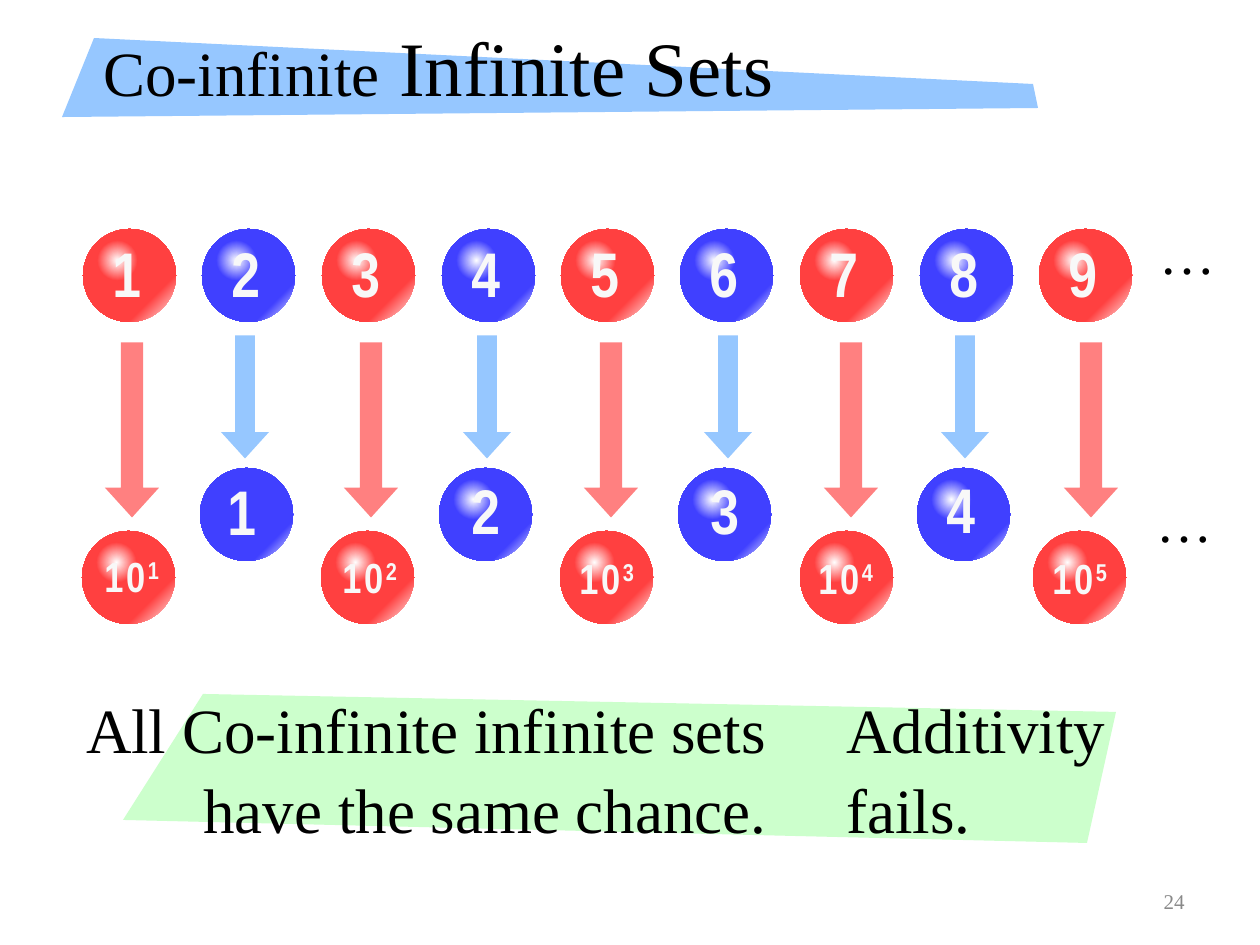
from dataclasses import dataclass

from lxml import etree
from pptx import Presentation
from pptx import util as u
from pptx.dml.color import RGBColor
from pptx.enum import shapes, text
from pptx.oxml import parse_xml

PX = 914400 / 126  # EMU in one px
NAMESPACE = "http://schemas.openxmlformats.org/drawingml/2006/main"


@dataclass(frozen=True)
class Theme:
    serif: str = "Times New Roman"
    narrow: str = "Arial Narrow"
    black: str = "000000"
    white: str = "FFFFFF"
    label: str = "F8F8F8"
    grey: str = "898989"
    red: str = "FF4040"
    blue: str = "4040FF"
    light_red: str = "FF8080"
    light_blue: str = "96C7FF"
    light_green: str = "CCFFCC"
    title_size: int = 44
    body_size: int = 36
    ellipsis_size: int = 32
    power_size: int = 24
    number_size: int = 12


THEME = Theme()
BALL, GLINT = 93, 45


def px(*lengths):
    return [u.Emu(round(length * PX)) for length in lengths]


def add_text(slide, box, runs, font=THEME.serif, size=THEME.body_size,
             color=THEME.black, bold=False, spacing=0, line=1.06, wrap=True,
             align=text.PP_ALIGN.LEFT, anchor=text.MSO_ANCHOR.TOP):
    """Each run is (words, format), where format may hold size and baseline."""
    frame = slide.shapes.add_textbox(*px(*box)).text_frame
    frame.word_wrap = wrap
    frame.vertical_anchor = anchor
    paragraph = frame.paragraphs[0]
    paragraph.alignment = align
    paragraph.line_spacing = line
    for words, run_format in runs:
        run = paragraph.add_run()
        run.text = words
        run.font.name = font
        run.font.size = u.Pt(run_format.get("size", size))
        run.font.bold = bold
        run.font.color.rgb = RGBColor.from_string(color)
        properties = run.font._element
        if spacing:
            properties.set("spc", str(round(spacing * 100)))
        if "baseline" in run_format:
            properties.set("baseline", str(run_format["baseline"] * 1000))


def paint(shape, color):
    shape.shadow.inherit = False
    shape.fill.solid()
    shape.fill.fore_color.rgb = RGBColor.from_string(color)
    shape.line.fill.background()


def add_band(slide, points, color):
    builder = slide.shapes.build_freeform(*points[0], scale=PX)
    builder.add_line_segments(points[1:], close=True)
    paint(builder.convert_to_shape(), color)


def add_arrow(slide, center_x, center_y, length, width, color):
    """A block arrow that points down."""
    box = px(center_x - length / 2, center_y - width / 2, length, width)
    arrow = slide.shapes.add_shape(shapes.MSO_SHAPE.RIGHT_ARROW, *box)
    arrow.rotation = 90
    arrow.adjustments[0], arrow.adjustments[1] = 0.41, 0.55
    paint(arrow, color)


def add_radial_circle(slide, left, top, size, stops, focus):
    """Focus gives the left, top, right and bottom insets in percent."""
    box = px(left, top, size, size)
    circle = slide.shapes.add_shape(shapes.MSO_SHAPE.OVAL, *box)
    paint(circle, THEME.white)
    stop_xml = "".join(
        f'<a:gs pos="{position * 1000}"><a:srgbClr val="{color}"/></a:gs>'
        for position, color in stops)
    insets = " ".join(f'{side}="{inset * 1000}"' for side, inset in zip("ltrb", focus))
    gradient = parse_xml(
        f'<a:gradFill xmlns:a="{NAMESPACE}" rotWithShape="1"><a:gsLst>{stop_xml}'
        f'</a:gsLst><a:path path="circle"><a:fillToRect {insets}/></a:path></a:gradFill>')
    solid = circle._element.spPr.find(etree.QName(NAMESPACE, "solidFill").text)
    solid.getparent().replace(solid, gradient)


def add_ball(slide, left, top, color, glint=True):
    edge = 74 if color == THEME.red else 78
    add_radial_circle(slide, left, top, BALL,
                      [(0, color), (edge, color), (100, THEME.white)],
                      (0, 0, 100, 100))
    if glint:
        add_radial_circle(slide, left + 12, top + 9, GLINT,
                          [(0, THEME.white), (64, color), (100, color)],
                          (50, 50, 50, 50))


def add_label(slide, box, runs, size=THEME.body_size):
    add_text(slide, box, runs, font=THEME.narrow, size=size,
             color=THEME.label, bold=True, spacing=1.5)


def add_number_row(slide):
    for index in range(9):
        left = round(83 + 119.5 * index)
        add_ball(slide, left, 229, THEME.blue if index % 2 else THEME.red)
        add_label(slide, (left + 17, 224, 69, 89), [(str(index + 1), {})])


def add_even_row(slide):
    # Ball left, label left, label top, arrow centre
    columns = [(200, 215, 462, 245), (439, 459, 461, 487),
               (678, 698, 461, 728), (917, 934, 460, 965)]
    for number, (left, label_left, label_top, center) in enumerate(columns, 1):
        add_ball(slide, left, 468, THEME.blue, glint=number > 1)
        add_label(slide, (label_left, label_top, 69, 89), [(str(number), {})])
        add_arrow(slide, center, 397, 123, 48, THEME.light_blue)


def add_power_row(slide):
    # Ball left, label left, label top, arrow centre
    columns = [(82, 92, 541, 132), (321, 330, 542, 371), (560, 567, 543, 611),
               (800, 806, 543, 851), (1033, 1040, 543, 1091)]
    for power, (left, label_left, label_top, center) in enumerate(columns, 1):
        add_ball(slide, left, 531, THEME.red)
        add_label(slide, (label_left, label_top, 100, 63),
                  [("10", {}), (str(power), {"baseline": 30})], THEME.power_size)
        add_arrow(slide, center, 430, 175, 54, THEME.light_red)


def main():
    presentation = Presentation()
    presentation.slide_width, presentation.slide_height = px(1260, 945)
    slide = presentation.slides.add_slide(presentation.slide_layouts[6])

    # Title and slide number
    add_band(slide, [(94, 38), (1033, 84), (1038, 108), (62, 117)], THEME.light_blue)
    add_text(slide, (91, -4, 1104, 139),
             [("Co-infinite", {}), (" Infinite Sets", {"size": THEME.title_size})],
             line=1, anchor=text.MSO_ANCHOR.MIDDLE)
    add_text(slide, (903, 876, 294, 50), [("24", {})], size=THEME.number_size,
             color=THEME.grey, line=1, align=text.PP_ALIGN.RIGHT,
             anchor=text.MSO_ANCHOR.MIDDLE)

    # Numbers and where they are sent
    add_number_row(slide)
    add_even_row(slide)
    add_power_row(slide)
    for left, top in [(1147, 208), (1144, 476)]:
        add_text(slide, (left, top, 82, 81), [("…", {})],
                 size=THEME.ellipsis_size, wrap=False)

    # Conclusion
    add_band(slide, [(203, 694), (1116, 712), (1087, 843), (123, 820)],
             THEME.light_green)
    add_text(slide, (68, 680, 711, 165),
             [("All Co-infinite infinite sets have the same chance.", {})],
             align=text.PP_ALIGN.RIGHT)
    add_text(slide, (834, 680, 307, 165), [("Additivity fails.", {})])

    presentation.save("out.pptx")


if __name__ == "__main__":
    main()
